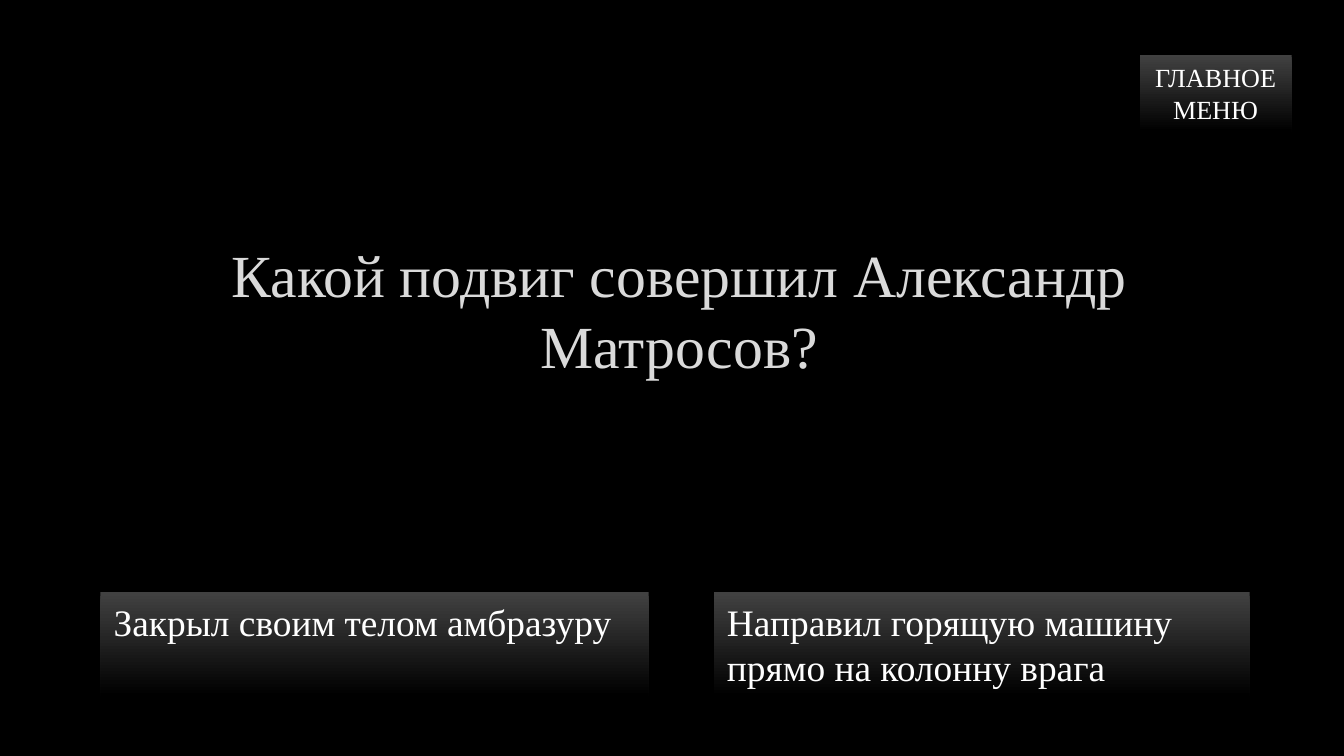
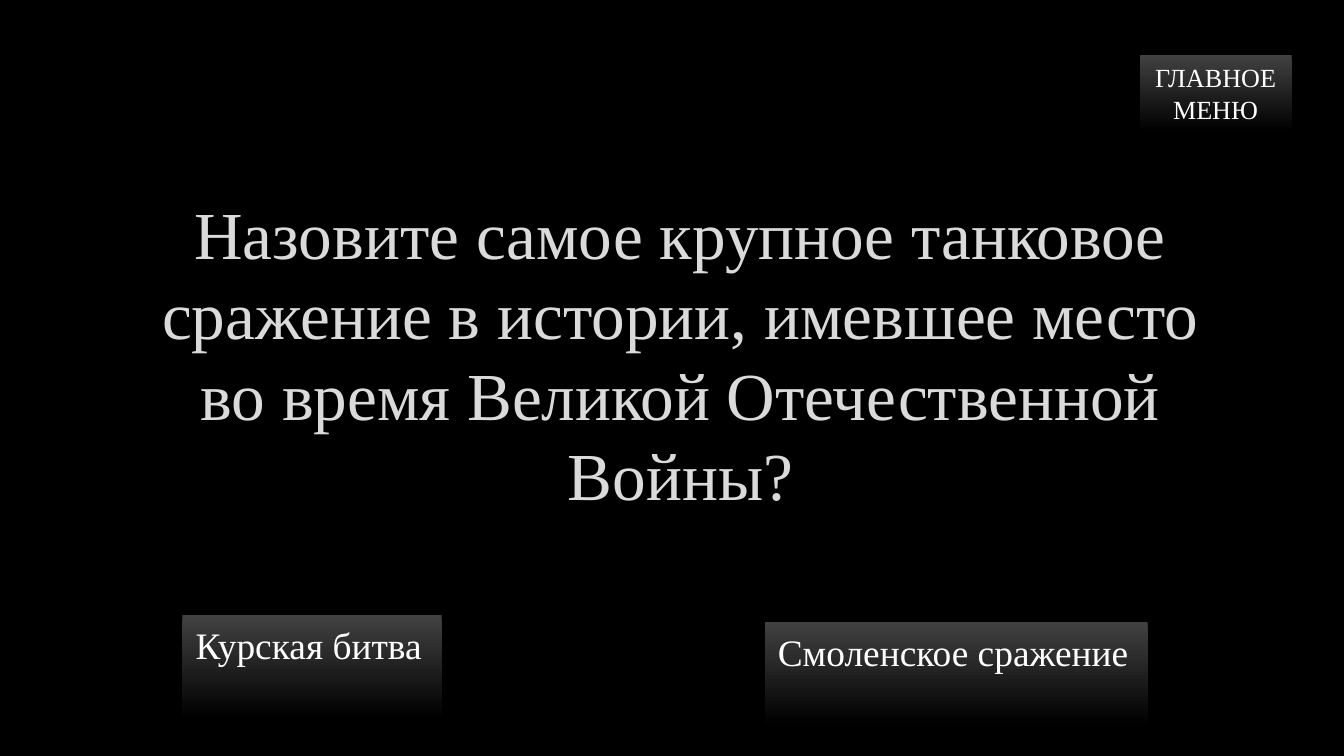
from copy import deepcopy

from lxml.etree import SubElement
from pptx import Presentation
from pptx.dml.color import RGBColor
from pptx.enum.shapes import MSO_SHAPE
from pptx.enum.text import MSO_ANCHOR, MSO_AUTO_SIZE, PP_ALIGN
from pptx.oxml import parse_xml
from pptx.oxml.ns import nsdecls, qn
from pptx.util import Cm, Pt

QUESTIONS = [
    {
        "question": "Какой подвиг совершил Александр Матросов?",
        "size": 32,
        "corner": (2.06, 4.83),
        "answers": [
            ("Закрыл своим телом амбразуру", 1.9, 11.2, 10.36),
            ("Направил горящую машину прямо на колонну врага", 13.49, 11.2, 10.13),
        ],
    },
    {
        "question": "Назовите самое крупное танковое сражение в истории, "
                    "имевшее место во время Великой Отечественной Войны?",
        "size": 36,
        "corner": (2.08, 5.66),
        "answers": [
            ("Курская битва", 3.45, 11.63, 4.9),
            ("Смоленское сражение", 14.45, 11.76, 7.24),
        ],
    },
]
MENU = "ГЛАВНОЕ\nМЕНЮ"
MENU_BOX = (21.54, 1.04, 2.87, 1.45)
QUESTION_SIZE = (21.56, 2.03)
ANSWER_HEIGHT = 1.96

FONT = "Times New Roman"
BLACK, DARK, OUTLINE, SILVER, WHITE = "000000", "414141", "404040", "DADADA", "FFFFFF"
FRAME_FORMAT = {"word_wrap": True, "auto_size": MSO_AUTO_SIZE.NONE}


def color(value):
    return RGBColor.from_string(value)


def apply(target, values):
    for name, value in values.items():
        setattr(target, name, value)


def place(shape, left, top, width, height):
    apply(shape, {"left": Cm(left), "top": Cm(top), "width": Cm(width), "height": Cm(height)})


def write(shape, text, size, text_color, align, anchor):
    frame = shape.text_frame
    apply(frame, {**FRAME_FORMAT, "vertical_anchor": anchor})
    paragraph = frame.paragraphs[0]
    paragraph.text = text
    paragraph.alignment = align
    for run in paragraph.runs:
        apply(run.font, {"name": FONT, "size": Pt(size)})
        run.font.color.rgb = color(text_color)
    for line_break in paragraph._p.findall(qn("a:br")):
        line_break.insert(0, deepcopy(paragraph.runs[0]._r.rPr))
    return paragraph.runs


def add_shadow(shape):
    shape.shadow.inherit = False
    effects = shape._element.spPr.find(qn("a:effectLst"))
    shadow = SubElement(effects, qn("a:outerShdw"), blurRad=str(Pt(6)), dist=str(Pt(3)),
                        dir="5400000", rotWithShape="0")
    shade = SubElement(shadow, qn("a:srgbClr"), val=BLACK)
    SubElement(shade, qn("a:alpha"), val="75000")


def add_button(slide, text, box, size, align):
    button = slide.shapes.add_shape(MSO_SHAPE.RECTANGLE, *map(Cm, box))
    button.fill.gradient()
    button.fill.gradient_angle = 270
    for stop, shade in zip(button.fill.gradient_stops, (DARK, BLACK)):
        stop.color.rgb = color(shade)
    button.line.fill.background()
    add_shadow(button)
    write(button, text, size, WHITE, align, MSO_ANCHOR.TOP)


def add_question(slide, text, size, corner):
    title = slide.shapes.title
    place(title, *corner, *QUESTION_SIZE)
    for run in write(title, text, size, SILVER, PP_ALIGN.CENTER, MSO_ANCHOR.MIDDLE):
        run._r.rPr.insert(0, parse_xml(
            f'<a:ln {nsdecls("a")} w="{Pt(0.75)}"><a:solidFill><a:srgbClr val="{OUTLINE}">'
            '<a:alpha val="10000"/></a:srgbClr></a:solidFill><a:prstDash val="solid"/></a:ln>'))


def main():
    quiz = Presentation()
    apply(quiz, {"slide_width": Cm(25.4), "slide_height": Cm(14.29)})
    backdrop = quiz.slide_master.background.fill
    backdrop.solid()
    backdrop.fore_color.rgb = color(BLACK)
    for entry in QUESTIONS:
        slide = quiz.slides.add_slide(quiz.slide_layouts[5])
        add_question(slide, entry["question"], entry["size"], entry["corner"])
        add_button(slide, MENU, MENU_BOX, 14, PP_ALIGN.CENTER)
        for answer, left, top, width in entry["answers"]:
            add_button(slide, answer, (left, top, width, ANSWER_HEIGHT), 20, PP_ALIGN.LEFT)
    quiz.save("out.pptx")


if __name__ == "__main__":
    main()
